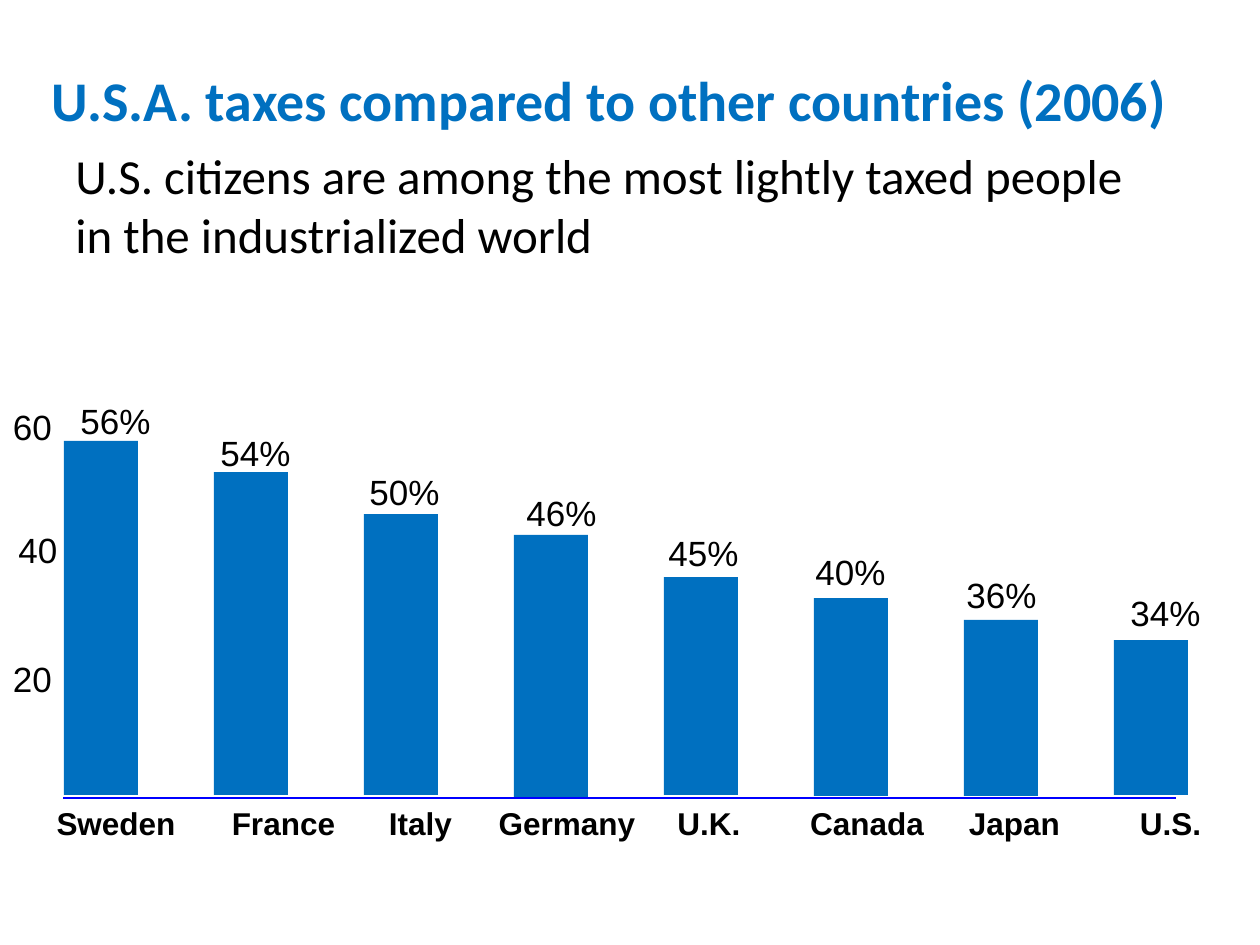
from lxml.etree import SubElement
from pptx import Presentation
from pptx.dml.color import RGBColor
from pptx.enum.shapes import MSO_CONNECTOR, MSO_SHAPE
from pptx.enum.text import MSO_ANCHOR, MSO_AUTO_SIZE, PP_ALIGN
from pptx.oxml.ns import qn
from pptx.util import Emu, Pt

BLUE = RGBColor(0x00, 0x70, 0xC0)
AXIS = RGBColor(0x00, 0x00, 0xFF)
BLACK = RGBColor(0x00, 0x00, 0x00)
SCALE = 914400 / 126

HEAD = {"name": "Calibri", "size": Pt(32), "bold": True}
BODY = {"name": "Calibri", "size": Pt(28)}
VALUE = {"name": "Arial", "size": Pt(20)}
NAME = {"name": "Arial", "size": Pt(18), "bold": True}

FIRST, STEP, WIDTH = 64, 150, 74
BASE = 798

# country, name left and width, value, value left and top, bar top and height
BARS = [
    ("Sweden", 32, 168, "56%", 63, 393, 441, 354),
    ("France", 194, 179, "54%", 203, 425, 472, 323),
    ("Italy", 357, 127, "50%", 352, 464, 514, 281),
    ("Germany", 483, 168, "46%", 509, 485, 535, 262),
    ("U.K.", 651, 116, "45%", 651, 525, 577, 218),
    ("Canada", 788, 158, "40%", 798, 544, 598, 198),
    ("Japan", 941, 147, "36%", 949, 567, 620, 176),
    ("U.S.", 1081, 179, "34%", 1113, 585, 640, 155),
]
TICKS = [("60", -4, 399, 73), ("40", 0, 522, 76), ("20", 0, 651, 65)]


def emu(*px):
    return [Emu(round(n * SCALE)) for n in px]


class Deck:
    def __init__(self):
        self.prs = Presentation()
        self.prs.slide_width, self.prs.slide_height = emu(1260, 945)
        self.slide = self.prs.slides.add_slide(self.prs.slide_layouts[6])

    def text(self, words, box, style, color=BLACK, align=PP_ALIGN.CENTER,
             anchor=MSO_ANCHOR.TOP, space=None):
        frame = self.slide.shapes.add_textbox(*emu(*box)).text_frame
        look = {"word_wrap": True, "vertical_anchor": anchor,
                "auto_size": MSO_AUTO_SIZE.SHAPE_TO_FIT_TEXT}
        for key, val in look.items():
            setattr(frame, key, val)
        para = frame.paragraphs[0]
        para.alignment, para.line_spacing = align, space
        run = para.add_run()
        run.text = words
        for key, val in style.items():
            setattr(run.font, key, val)
        run.font.color.rgb = color

    def bar(self, box):
        rect = self.slide.shapes.add_shape(MSO_SHAPE.RECTANGLE, *emu(*box))
        rect.shadow.inherit = False
        rect.fill.solid()
        rect.fill.fore_color.rgb = BLUE
        rect.line.fill.background()

    def line(self, ends):
        rule = self.slide.shapes.add_connector(
            MSO_CONNECTOR.STRAIGHT, *emu(*ends))
        rule.line.color.rgb = AXIS
        rule.line.width = Pt(0.75)
        SubElement(rule._element.spPr, qn("a:effectLst"))


def main():
    deck = Deck()
    deck.line((63, BASE, 1176, BASE))
    for i, (land, left, wide, rate, x, y, top, high) in enumerate(BARS):
        deck.bar((FIRST + i * STEP, top, WIDTH, high))
        deck.text(land, (left, BASE, wide, 47), NAME)
        deck.text(rate, (x, y, 105, 50), VALUE)
    for mark, left, top, wide in TICKS:
        deck.text(mark, (left, top, wide, 50), VALUE)
    deck.text("U.S.A. taxes compared to other countries (2006)",
              (39, 71, 1176, 68), HEAD, BLUE, PP_ALIGN.LEFT,
              MSO_ANCHOR.MIDDLE, 0.8)
    deck.text("U.S. citizens are among the most lightly taxed people "
              "in the industrialized world",
              (63, 139, 1102, 131), BODY, align=PP_ALIGN.LEFT)
    deck.prs.save("out.pptx")


if __name__ == "__main__":
    main()
